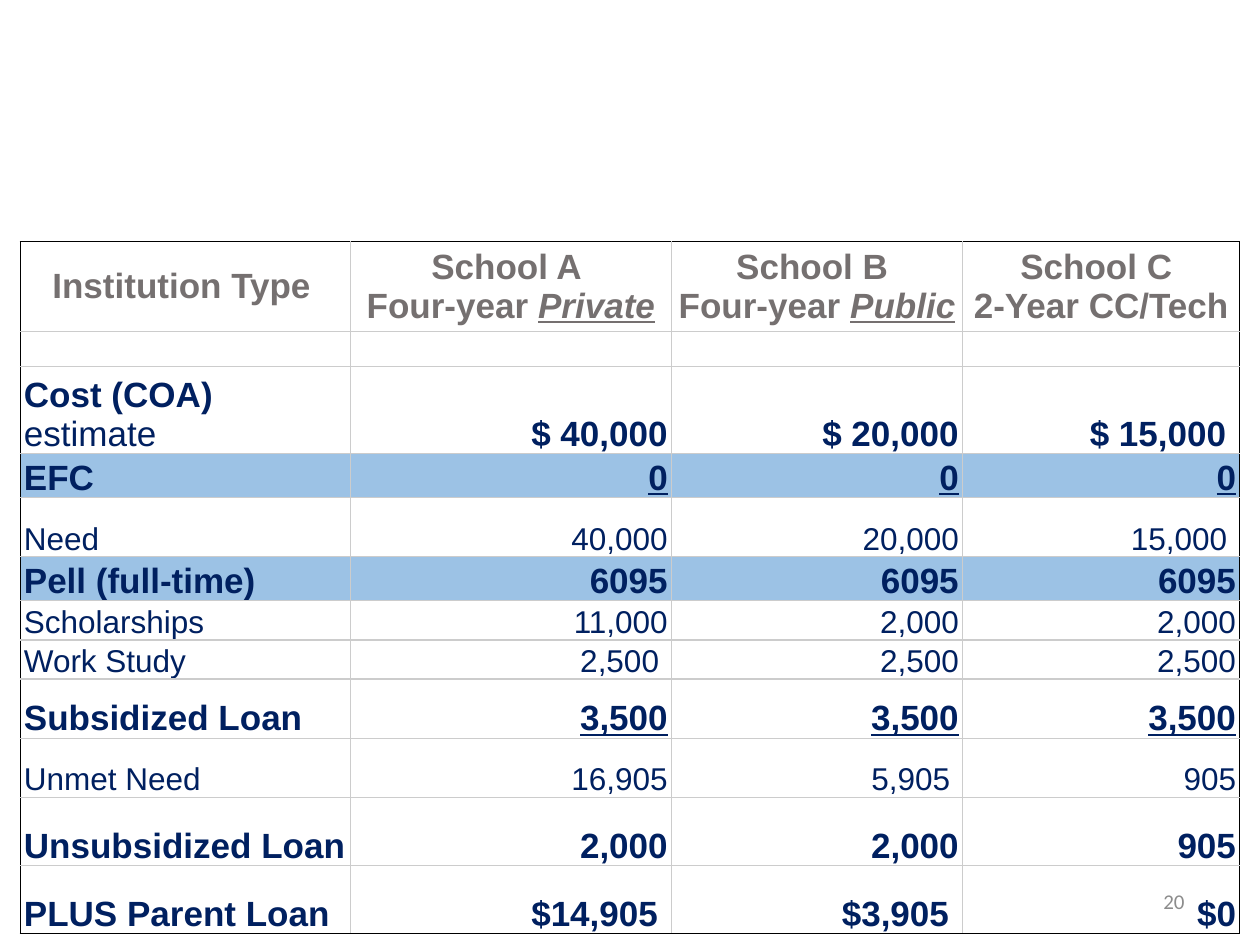
"""Build a slide comparing financial aid at three types of school."""
import pptx
import pptx.dml.color
import pptx.enum.text
import pptx.oxml
import pptx.oxml.ns
import pptx.util
from pptx.util import Inches

COLORS = {"header": "757070", "body": "002060", "band": "9CC2E5",
          "grid": "CCCCCC", "frame": "000000", "number": "8C8C8C"}
ALIGN = pptx.enum.text.PP_ALIGN
ANCHOR = pptx.enum.text.MSO_ANCHOR


def add_span(para, text, size, color, style="", font="Arial"):
    span = para.add_run()
    span.text = text
    span.font.name = font
    span.font.size = pptx.util.Pt(size)
    span.font.color.rgb = pptx.dml.color.RGBColor.from_string(COLORS[color])
    span.font.bold = "b" in style
    span.font.italic = "i" in style
    span.font.underline = "u" in style


def add_border(cell, side, color):
    line = pptx.oxml.parse_xml(
        f'<a:ln{side} {pptx.oxml.ns.nsdecls("a")} w="9525"><a:solidFill>'
        f'<a:srgbClr val="{COLORS[color]}"/></a:solidFill></a:ln{side}>')
    cell._tc.get_or_add_tcPr().append(line)


deck = pptx.Presentation()
deck.slide_width, deck.slide_height = Inches(10), Inches(7.5)
page = deck.slides.add_slide(deck.slide_layouts[6])

box = page.shapes.add_textbox(Inches(7.17), Inches(6.95), Inches(2.33), Inches(0.4))
box.text_frame.word_wrap = True
box.text_frame.vertical_anchor = ANCHOR.MIDDLE
para = box.text_frame.paragraphs[0]
para.alignment = ALIGN.RIGHT
add_span(para, "20", 12, "number", font="Calibri")

headers = [
    [[("Institution Type ", "b")]],
    [[("School A ", "b")], [("Four-year ", "b"), ("Private", "biu")]],
    [[("School B ", "b")], [("Four-year ", "b"), ("Public", "biu")]],
    [[("School C ", "b")], [("2-Year CC/Tech", "b")]],
]
body = [
    (0.69, "b", "b", ["Cost (COA) ", "$ 40,000", "$ 20,000", "$ 15,000 "]),
    (0.35, "b", "bu", ["EFC", "0", "0", "0"]),
    (0.47, "", "", ["Need", "40,000", "20,000", "15,000 "]),
    (0.35, "b", "b", ["Pell (full-time)", "6095", "6095", "6095"]),
    (0.31, "", "", ["Scholarships", "11,000", "2,000", "2,000"]),
    (0.31, "", "", ["Work Study", "2,500 ", "2,500", "2,500"]),
    (0.47, "b", "bu", ["Subsidized Loan", "3,500", "3,500", "3,500"]),
    (0.47, "", "", ["Unmet Need", "16,905", "5,905 ", "905"]),
    (0.54, "b", "b", ["Unsubsidized Loan", "2,000", "2,000", "905"]),
    (0.54, "b", "b", ["PLUS Parent Loan", "$14,905 ", "$3,905 ", "$0"]),
]
banded = ["EFC", "Pell (full-time)"]
widths = [2.62, 2.55, 2.31, 2.2]
heights = [0.71, 0.28] + [entry[0] for entry in body]
last_row, last_column = len(heights) - 1, len(widths) - 1

table = page.shapes.add_table(len(heights), len(widths), Inches(0.16), Inches(1.92),
                              Inches(sum(widths)), Inches(sum(heights))).table
table.first_row = table.horz_banding = False
for column, width in zip(table.columns, widths):
    column.width = Inches(width)
for row, height in zip(table.rows, heights):
    row.height = Inches(height)

for row in range(last_row + 1):
    for column in range(last_column + 1):
        cell = table.cell(row, column)
        cell.margin_left = Inches(0.03)
        cell.margin_right = Inches(0.03 if column else 0.01)
        cell.margin_top = cell.margin_bottom = 0
        cell.vertical_anchor = ANCHOR.BOTTOM if row else ANCHOR.MIDDLE
        for side, outer in (("L", column == 0), ("R", column == last_column),
                            ("T", row == 0), ("B", row == last_row)):
            add_border(cell, side, "frame" if outer else "grid")
        cell.fill.background()

for column, lines in enumerate(headers):
    frame = table.cell(0, column).text_frame
    for index, line in enumerate(lines):
        para = frame.add_paragraph() if index else frame.paragraphs[0]
        para.alignment = ALIGN.CENTER
        for text, style in line:
            add_span(para, text, 20, "header", style)
    spacer = table.cell(1, column).text_frame.paragraphs[0]
    spacer._p.append(pptx.oxml.parse_xml(
        f'<a:endParaRPr {pptx.oxml.ns.nsdecls("a")} sz="1200"/>'))

for row, (height, label_style, value_style, texts) in enumerate(body, start=2):
    size = 20 if label_style else 18
    for column, text in enumerate(texts):
        cell = table.cell(row, column)
        para = cell.text_frame.paragraphs[0]
        para.alignment = ALIGN.RIGHT if column else ALIGN.LEFT
        add_span(para, text, size, "body", value_style if column else label_style)
        if texts[0] in banded:
            cell.fill.solid()
            cell.fill.fore_color.rgb = pptx.dml.color.RGBColor.from_string(COLORS["band"])
add_span(table.cell(2, 0).text_frame.paragraphs[0], "estimate", 20, "body")

deck.save("out.pptx")
